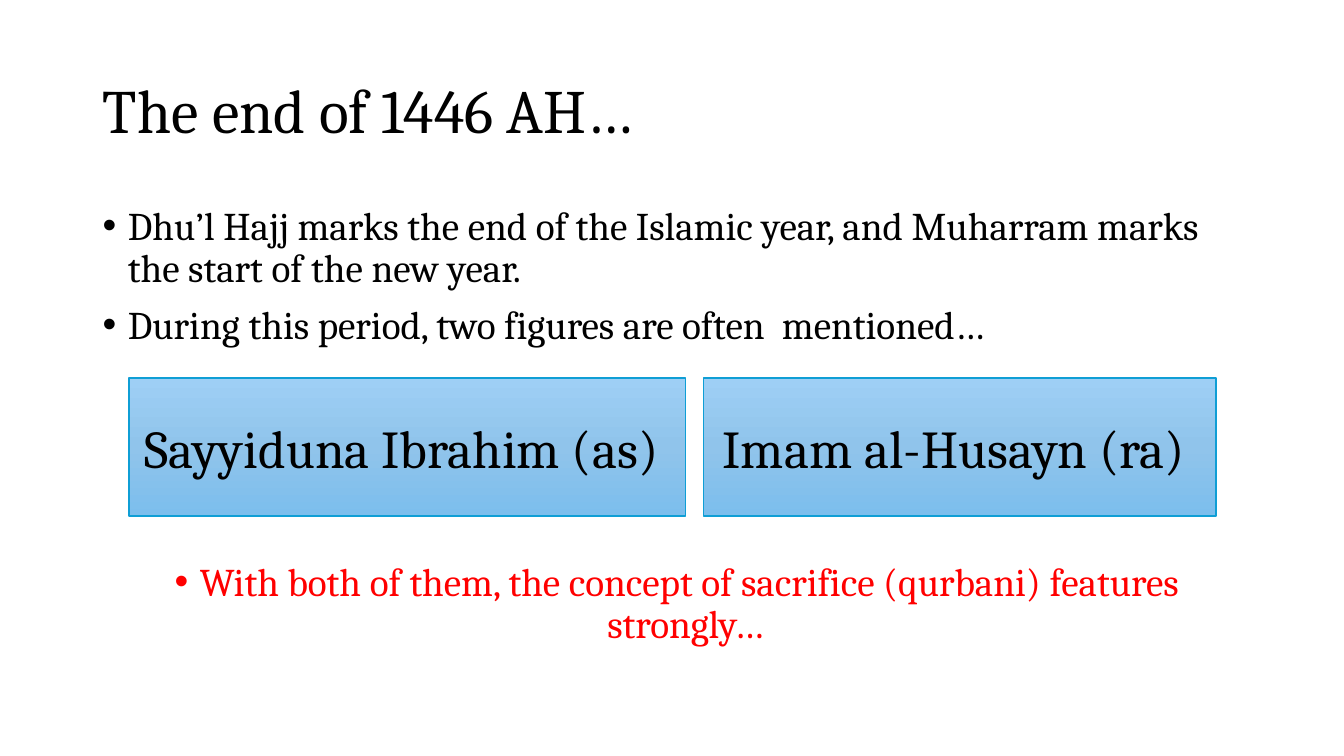
"""Build a slide on the two figures recalled at the end of 1446 AH."""
from dataclasses import dataclass

import lxml.etree
import pptx
import pptx.dml.color
import pptx.enum.shapes
import pptx.enum.text
import pptx.oxml.ns
import pptx.slide
import pptx.util

SCALE = 9144
FONT = "Cambria"
INDENT = 25
BLACK, RED, EDGE = "000000", "FF0000", "0F9ED5"
STOPS = {0: "9ECFF5", 50: "90C4EB", 100: "7CBEED"}
ALIGN = pptx.enum.text.PP_ALIGN
ANCHOR = pptx.enum.text.MSO_ANCHOR


@dataclass
class Box:
    left: int
    top: int
    width: int
    height: int

    def emu(self) -> list[int]:
        return [px(n) for n in (self.left, self.top, self.width, self.height)]


@dataclass
class Card:
    left: int
    width: int
    text: str


@dataclass
class Notes:
    box: Box
    lines: list[str]
    color: str
    align: ALIGN


TITLE = Box(92, 40, 1150, 145)
CARD_TOP, CARD_HEIGHT = 375, 137
CARDS = [
    Card(128, 552, "Sayyiduna Ibrahim (as) "),
    Card(698, 508, "Imam al-Husayn (ra) "),
]
NOTES = [
    Notes(Box(92, 200, 1150, 175), [
        "Dhu’l Hajj marks the end of the Islamic year, and Muharram marks the start of the new year.",
        "During this period, two figures are often  mentioned…",
    ], BLACK, ALIGN.LEFT),
    Notes(Box(96, 553, 1150, 175), [
        "With both of them, the concept of sacrifice (qurbani) features strongly… ",
    ], RED, ALIGN.CENTER),
]


def px(count: int) -> int:
    return pptx.util.Emu(count * SCALE)


def rgb(code: str) -> pptx.dml.color.RGBColor:
    return pptx.dml.color.RGBColor.from_string(code)


def add_tag(parent, name: str, **attrs: str):
    return lxml.etree.SubElement(parent, pptx.oxml.ns.qn(name), attrs)


def write(shape, lines: list[str], *, size: int, color: str = BLACK,
          align: ALIGN = ALIGN.LEFT, anchor: ANCHOR = ANCHOR.MIDDLE,
          pitch: float = 1.0, before: int = 0, bullet: bool = False) -> None:
    frame = shape.text_frame
    frame.word_wrap = True
    frame.auto_size = pptx.enum.text.MSO_AUTO_SIZE.NONE
    frame.vertical_anchor = anchor
    frame.text = "\n".join(lines)
    for para in frame.paragraphs:
        para.alignment = align
        para.line_spacing = pitch
        para.space_before = pptx.util.Pt(before)
        font = para.runs[0].font
        font.name, font.size = FONT, pptx.util.Pt(size)
        font.color.rgb = rgb(color)
        if bullet:
            props = para._p.get_or_add_pPr()
            props.set("marL", str(px(INDENT)))
            props.set("indent", str(px(-INDENT)))
            add_tag(props, "a:buFont", typeface="Arial")
            add_tag(props, "a:buChar", char="•")


def shade(shape) -> None:
    shape.fill.gradient()
    shape.fill.gradient_angle = 270
    stops = shape._element.spPr.find(".//" + pptx.oxml.ns.qn("a:gsLst"))
    stops.clear()
    for place, code in STOPS.items():
        stop = add_tag(stops, "a:gs", pos=str(place * 1000))
        add_tag(stop, "a:srgbClr", val=code)


def add_card(slide: pptx.slide.Slide, card: Card) -> None:
    box = Box(card.left, CARD_TOP, card.width, CARD_HEIGHT)
    shape = slide.shapes.add_shape(pptx.enum.shapes.MSO_SHAPE.RECTANGLE, *box.emu())
    shape.shadow.inherit = False
    shade(shape)
    shape.line.color.rgb = rgb(EDGE)
    shape.line.width = pptx.util.Pt(1)
    write(shape, [card.text], size=38, align=ALIGN.CENTER)


def add_notes(slide: pptx.slide.Slide, notes: Notes) -> None:
    shape = slide.shapes.add_textbox(*notes.box.emu())
    write(shape, notes.lines, size=28, color=notes.color, align=notes.align,
          anchor=ANCHOR.TOP, pitch=0.9, before=10, bullet=True)


def main() -> None:
    deck = pptx.Presentation()
    deck.slide_width, deck.slide_height = px(1333), px(750)
    slide = deck.slides.add_slide(deck.slide_layouts.get_by_name("Title Only"))
    title = slide.shapes.title
    title.left, title.top, title.width, title.height = TITLE.emu()
    write(title, ["The end of 1446 AH…"], size=44, pitch=0.9)
    for notes in NOTES:
        add_notes(slide, notes)
    for card in CARDS:
        add_card(slide, card)
    deck.save("out.pptx")


if __name__ == "__main__":
    main()
